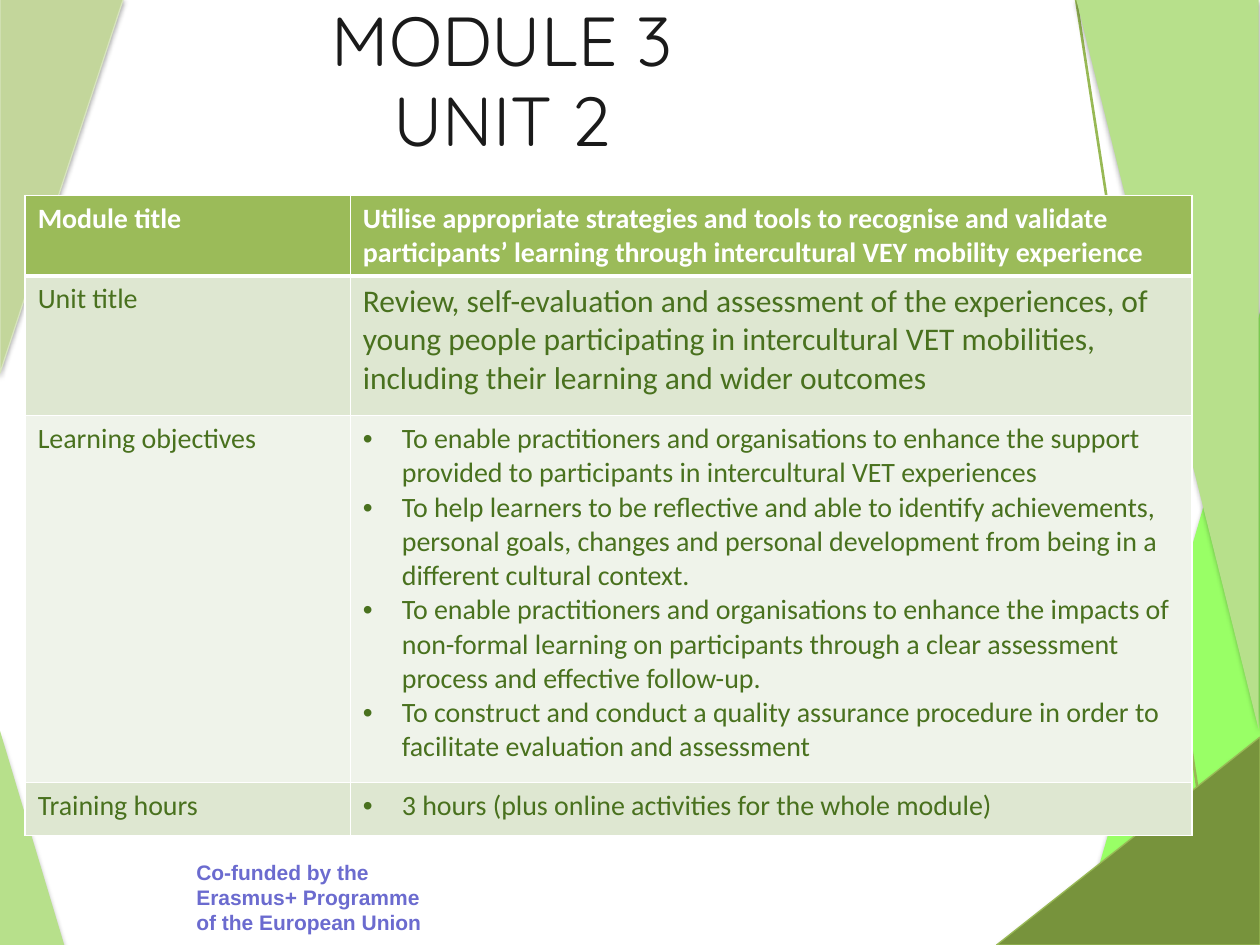
import dataclasses
import lxml.etree
import pptx
import pptx.dml.color
import pptx.enum.shapes
import pptx.enum.text
import pptx.oxml.ns
import pptx.util

INCH = pptx.util.Inches
POINT = pptx.util.Pt
LEAF, EDGE, WHITE, INK = "B7E08B", "98B955", "FFFFFF", "49711E"
HEAD, DARK, PALE = "9BBB59", "DEE7D1", "EFF3EA"


@dataclasses.dataclass
class Wedge:
    left: float
    top: float
    width: float
    height: float
    fill: str
    flips: str = ""
    edge: str = ""
    shade: int = 35
    drop: float = 1.8


@dataclasses.dataclass
class Row:
    label: str
    lines: list[str]
    height: float
    fill: str
    ink: str = INK
    size: int = 16
    bold: bool = False
    dots: bool = False
    base: int = 1


WEDGES = [
    Wedge(8.54, 2.41, 1.48, 5.09, "99FF66", "H", shade=38, drop=1.6),
    Wedge(0, 5.8, 0.51, 1.7, LEAF),
    Wedge(0, -0.01, 0.98, 2.97, "C3D69B", "V", "D7E4BD"),
    Wedge(8.54, -0.01, 1.45, 5.8, LEAF, "HV"),
    Wedge(7.91, 5.85, 2.09, 1.65, "77933C", "H", EDGE),
]
RAYS = [(8.96, 7.5, 9.3, 2.1), (9.65, 7.21, 8.54, -0.01)]
ROWS = [
    Row("Module title", [
        "Utilise appropriate strategies and tools to recognise and validate "
        "participants’ learning through intercultural VEY mobility experience",
    ], 0.64, HEAD, WHITE, bold=True, base=3),
    Row("Unit title", [
        "Review, self-evaluation and assessment of the experiences, of young people "
        "participating in intercultural VET mobilities, including their learning "
        "and wider outcomes",
    ], 1.11, DARK, size=18),
    Row("Learning objectives", [
        "To enable practitioners and organisations to enhance the support provided "
        "to participants in intercultural VET experiences",
        "To help learners to be reflective and able to identify achievements, personal "
        "goals, changes and personal development from being in a different cultural context.",
        "To enable practitioners and organisations to enhance the impacts of non-formal "
        "learning on participants through a clear assessment process and effective follow-up.",
        "To construct and conduct a quality assurance procedure in order to facilitate "
        "evaluation and assessment",
    ], 2.91, PALE, dots=True),
    Row("Training hours", ["3 hours (plus online activities for the whole module)"],
        0.42, DARK, dots=True),
]


def tint(code: str) -> pptx.dml.color.RGBColor:
    return pptx.dml.color.RGBColor.from_string(code)


def node(root, tag: str, **attrs):
    item = lxml.etree.SubElement(root, pptx.oxml.ns.qn(tag))
    for key, value in attrs.items():
        item.set(key, str(value))
    return item


def style(part, name: str, size: float, ink: str, bold: bool = False) -> None:
    looks = {"name": name, "size": POINT(size), "bold": bold}
    for run in part.runs:
        for key, value in looks.items():
            setattr(run.font, key, value)
        run.font.color.rgb = tint(ink)


def draw_wedge(slide, wedge: Wedge) -> None:
    box = map(INCH, (wedge.left, wedge.top, wedge.width, wedge.height))
    kind = pptx.enum.shapes.MSO_SHAPE.RIGHT_TRIANGLE
    shape = slide.shapes.add_shape(kind, *box)
    shape.fill.solid()
    shape.fill.fore_color.rgb = tint(wedge.fill)
    if wedge.edge:
        shape.line.color.rgb = tint(wedge.edge)
        shape.line.width = POINT(0.75)
    else:
        shape.line.fill.background()
    props = shape._element.spPr
    for axis in wedge.flips:
        props.xfrm.set("flip" + axis, "1")
    glow = node(node(props, "a:effectLst"), "a:outerShdw", blurRad=POINT(3.1),
                dist=POINT(wedge.drop), dir=5400000, rotWithShape=0)
    node(node(glow, "a:srgbClr", val="000000"), "a:alpha", val=wedge.shade * 1000)


def draw_ray(slide, ends: tuple) -> None:
    kind = pptx.enum.shapes.MSO_CONNECTOR.STRAIGHT
    ray = slide.shapes.add_connector(kind, *map(INCH, ends))
    ray.line.color.rgb = tint(EDGE)
    ray.line.width = POINT(1.5)
    node(ray._element.spPr, "a:effectLst")


def fill_cell(cell, lines: list[str], row: Row, size: int, dots: bool) -> None:
    cell.text = "\n".join(lines)
    for part in cell.text_frame.paragraphs:
        if dots:
            props = part._p.get_or_add_pPr()
            props.set("marL", str(INCH(0.31)))
            props.set("indent", str(INCH(-0.31)))
            node(props, "a:buFont", typeface="Arial")
            node(props, "a:buChar", char="•")
        style(part, "Calibri", size, row.ink, row.bold)
    props = cell._tc.get_or_add_tcPr()
    for side, width in {"L": 1, "R": 1, "T": 1, "B": row.base}.items():
        edge = node(props, "a:ln" + side, w=POINT(width))
        node(node(edge, "a:solidFill"), "a:srgbClr", val=WHITE)
    cell.fill.solid()
    cell.fill.fore_color.rgb = tint(row.fill)


def draw_table(slide) -> None:
    widths = (2.58, 6.68)
    high = sum(row.height for row in ROWS)
    box = map(INCH, (0.2, 1.55, sum(widths), high))
    table = slide.shapes.add_table(len(ROWS), len(widths), *box).table
    for column, width in zip(table.columns, widths):
        column.width = INCH(width)
    for index, row in enumerate(ROWS):
        table.rows[index].height = INCH(row.height)
        fill_cell(table.cell(index, 0), [row.label], row, 16, False)
        fill_cell(table.cell(index, 1), row.lines, row, row.size, row.dots)


def draw_title(slide) -> None:
    title = slide.shapes.title
    place = {"left": 0.75, "top": 0.03, "width": 6.47, "height": 1.25}
    for key, value in place.items():
        setattr(title, key, INCH(value))
    frame = title.text_frame
    frame.text = "MODULE 3\vUNIT 2"
    looks = {"word_wrap": True, "auto_size": pptx.enum.text.MSO_AUTO_SIZE.NONE,
             "vertical_anchor": pptx.enum.text.MSO_ANCHOR.MIDDLE}
    for key, value in looks.items():
        setattr(frame, key, value)
    part = frame.paragraphs[0]
    part.alignment = pptx.enum.text.PP_ALIGN.CENTER
    part.line_spacing = 0.96
    style(part, "Quicksand", 39.6, "1A1A1A")


def draw_credit(slide) -> None:
    frame = slide.shapes.add_textbox(*map(INCH, (1.46, 6.77, 2, 0.71))).text_frame
    frame.word_wrap = True
    frame.text = "Co-funded by the Erasmus+ Programme of the European Union"
    style(frame.paragraphs[0], "Arial", 12, "6B6BCF", True)


def main() -> None:
    deck = pptx.Presentation()
    deck.slide_width, deck.slide_height = INCH(10), INCH(7.5)
    slide = deck.slides.add_slide(deck.slide_layouts[5])
    draw_credit(slide)
    for wedge in WEDGES[:3]:
        draw_wedge(slide, wedge)
    for ends in RAYS:
        draw_ray(slide, ends)
    for wedge in WEDGES[3:]:
        draw_wedge(slide, wedge)
    draw_title(slide)
    draw_table(slide)
    deck.save("out.pptx")


if __name__ == "__main__":
    main()
